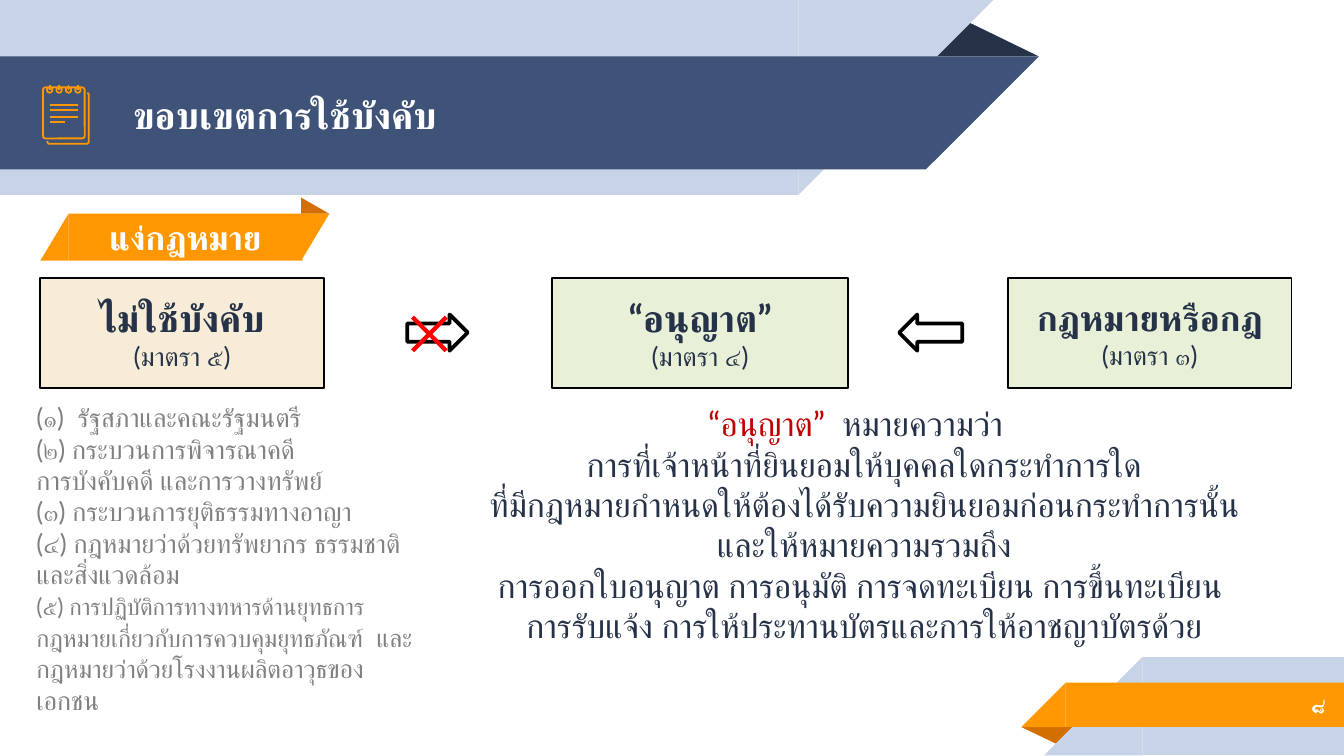
from dataclasses import dataclass
from lxml.etree import SubElement
from pptx import Presentation
from pptx.dml.color import RGBColor
from pptx.enum.shapes import MSO_CONNECTOR, MSO_SHAPE as Preset
from pptx.enum.text import MSO_ANCHOR, MSO_AUTO_SIZE, PP_ALIGN as Align
from pptx.oxml.ns import qn
from pptx.util import Inches, Pt


@dataclass(frozen=True)
class Theme:
    font: str = "Lato"
    navy: str = "3F5378"
    dark: str = "263248"
    pale: str = "C7D3E6"
    orange: str = "FF9800"
    rust: str = "D26F00"
    green: str = "E8F0D8"
    cream: str = "F7ECD7"
    white: str = "FFFFFF"
    black: str = "000000"
    red: str = "FF0000"
    term: str = "C00000"
    grey: str = "808080"
    heading: float = 20
    wide_heading: float = 19
    body: float = 18
    detail: float = 14
    number: float = 12


theme = Theme()


def add_block(preset, box, fill=None, line=None, weight=1, rotation=0, flip=False):
    block = slide.shapes.add_shape(preset, *map(Inches, box))
    block.shadow.inherit = False
    block.rotation = rotation
    if flip:
        block._element.spPr.xfrm.set("flipH", "1")
    if fill:
        block.fill.solid()
        block.fill.fore_color.rgb = RGBColor.from_string(fill)
    else:
        block.fill.background()
    if line:
        block.line.color.rgb = RGBColor.from_string(line)
        block.line.width = Pt(weight)
    else:
        block.line.fill.background()
    return block


def write(frame, lines, align):
    frame.word_wrap = True
    frame.auto_size = MSO_AUTO_SIZE.NONE
    frame.vertical_anchor = MSO_ANCHOR.MIDDLE
    for index, (text, size, color, bold) in enumerate(lines):
        paragraph = frame.add_paragraph() if index else frame.paragraphs[0]
        paragraph.text = text
        paragraph.alignment = align
        paragraph.space_before = Pt(0)
        font = paragraph.font
        font.size, font.bold, font.name = Pt(size), bold, theme.font
        font.color.rgb = RGBColor.from_string(color)
        SubElement(font._element, qn("a:cs"), typeface=theme.font)


prs = Presentation()
prs.slide_width = Inches(10)
prs.slide_height = Inches(10) * 9 // 16
slide = prs.slides.add_slide(prs.slide_layouts[1])
title, exemptions = slide.placeholders

fold = add_block(Preset.ISOSCELES_TRIANGLE, (6.88, 0.14, 0.85, 0.28), theme.dark)
fold.adjustments[0] = 0.324
for top, width, height, color in [(0, 5.94, 1.45, theme.pale), (0.42, 6.89, 0.84, theme.navy)]:
    add_block(Preset.RECTANGLE, (0, top, width, height), color)
    add_block(Preset.RIGHT_TRIANGLE, (width, top, height, height), color, rotation=180, flip=True)

fold = add_block(Preset.ISOSCELES_TRIANGLE, (7.6, 5.41, 0.43, 0.14), theme.rust, rotation=180)
fold.adjustments[0] = 0.324
for left, top, height, color in [(8.5, 4.89, 0.73, theme.pale), (7.93, 5.08, 0.33, theme.orange)]:
    add_block(Preset.RECTANGLE, (left, top, 10 - left, height), color)
    add_block(Preset.RIGHT_TRIANGLE, (left - height, top, height, height), color, flip=True)

slide.shapes._spTree.append(title._element)
title.left, title.top, title.width, title.height = map(Inches, (0.89, 0.43, 6.11, 0.84))
write(title.text_frame, [("ขอบเขตการใช้บังคับ", theme.heading, theme.white, True)], Align.LEFT)

page_number = slide.shapes.add_textbox(*map(Inches, (8.33, 5.07, 1.63, 0.35)))
write(page_number.text_frame, [("๘", theme.number, theme.white, True)], Align.RIGHT)

page_edge = [(0.35, 1.05), (0.36, 1.07), (0.37, 1.07), (0.65, 1.07),
             (0.66, 1.06), (0.66, 1.05), (0.66, 0.7), (0.65, 0.69)]
outline = slide.shapes.build_freeform(*map(Inches, page_edge[0]), scale=1.0)
outline.add_line_segments([(Inches(x), Inches(y)) for x, y in page_edge[1:]], close=False)
back_page = outline.convert_to_shape()
back_page.shadow.inherit = False
back_page.fill.background()
back_page.line.color.rgb = RGBColor.from_string(theme.orange)
back_page.line.width = Pt(0.96)
front_page = add_block(Preset.ROUNDED_RECTANGLE, (0.32, 0.65, 0.31, 0.38), line=theme.orange, weight=0.96)
front_page.adjustments[0] = 0.06

strokes = [(0.37, y, end, y, theme.orange, 0.96)
           for y, end in [(0.78, 0.58), (0.82, 0.58), (0.87, 0.58), (0.91, 0.48)]]
for ring in range(4):
    x = 0.37 + 0.07 * ring
    add_block(Preset.OVAL, (x - 0.02, 0.65, 0.04, 0.04), line=theme.orange, weight=0.96)
    strokes.append((x, 0.63, x, 0.67, theme.orange, 0.96))

law, permit, exempt = "กฎหมายหรือกฎ", "“อนุญาต”", "ไม่ใช้บังคับ"
for left, width, color, heading, size, section in [
    (7.5, 2.11, theme.green, law, theme.wide_heading, "(มาตรา ๓)"),
    (4.11, 2.2, theme.green, permit, theme.heading, "(มาตรา ๔)"),
    (0.3, 2.11, theme.cream, exempt, theme.heading, "(มาตรา ๕)"),
]:
    scope = add_block(Preset.RECTANGLE, (left, 2.07, width, 0.82), color, theme.black)
    write(scope.text_frame, [(heading, size, theme.dark, True),
                             (section, theme.detail, theme.dark, False)], Align.CENTER)

add_block(Preset.RIGHT_ARROW, (6.69, 2.34, 0.47, 0.27), line=theme.black, weight=2, rotation=180)
add_block(Preset.RIGHT_ARROW, (3.03, 2.34, 0.45, 0.27), line=theme.black, weight=2)
strokes += [(3.32, 2.36, 3.07, 2.61, theme.red, 2.25), (3.32, 2.61, 3.07, 2.36, theme.red, 2.25)]

for *ends, color, weight in strokes:
    stroke = slide.shapes.add_connector(MSO_CONNECTOR.STRAIGHT, *map(Inches, ends))
    stroke.line.color.rgb = RGBColor.from_string(color)
    stroke.line.width = Pt(weight)
    SubElement(stroke._element.spPr, qn("a:effectLst"))

definition = slide.shapes.add_textbox(*map(Inches, (2.98, 2.89, 6.9, 2.02))).text_frame
write(definition, [(text, theme.body, theme.dark, False) for text in [
    "",
    "การที่เจ้าหน้าที่ยินยอมให้บุคคลใดกระทำการใด",
    "ที่มีกฎหมายกำหนดให้ต้องได้รับความยินยอมก่อนกระทำการนั้น",
    "และให้หมายความรวมถึง",
    "การออกใบอนุญาต การอนุมัติ การจดทะเบียน การขึ้นทะเบียน ",
    "การรับแจ้ง การให้ประทานบัตรและการให้อาชญาบัตรด้วย",
]], Align.CENTER)
for text, color in [("“อนุญาต”  ", theme.term), ("หมายความว่า  ", theme.dark)]:
    phrase = definition.paragraphs[0].add_run()
    phrase.text = text
    phrase.font.color.rgb = RGBColor.from_string(color)

add_block(Preset.RIGHT_TRIANGLE, (0.3, 1.59, 0.21, 0.35), theme.orange, flip=True)
ribbon = add_block(Preset.RECTANGLE, (0.51, 1.59, 1.74, 0.35), theme.orange)
write(ribbon.text_frame, [("แง่กฎหมาย", theme.body, theme.white, True)], Align.CENTER)
add_block(Preset.RIGHT_TRIANGLE, (2.24, 1.59, 0.21, 0.35), theme.orange, rotation=180, flip=True)
fold = add_block(Preset.ISOSCELES_TRIANGLE, (2.24, 1.47, 0.21, 0.12), theme.rust)
fold.adjustments[0] = 0

slide.shapes._spTree.append(exemptions._element)
exemptions.left, exemptions.top, exemptions.width, exemptions.height = map(Inches, (0.17, 2.89, 3.07, 2.53))
exemption_list = exemptions.text_frame
write(exemption_list, [(text, theme.detail, theme.grey, False) for text in [
    "(๑)  รัฐสภาและคณะรัฐมนตรี",
    "(๒) กระบวนการพิจารณาคดี",
    "การบังคับคดี และการวางทรัพย์",
    "(๓) กระบวนการยุติธรรมทางอาญา",
    "(๔) กฎหมายว่าด้วยทรัพยากร ธรรมชาติและสิ่งแวดล้อม",
    "",
]], Align.LEFT)
for text, size in [
    ("(๕) การปฏิบัติการทางทหารด้านยุทธการ", 12.5),
    (" ", theme.detail),
    ("กฎหมายเกี่ยวกับการควบคุมยุทธภัณฑ์", 13),
    ("  ", theme.detail),
    ("และกฎหมายว่าด้วยโรงงานผลิตอาวุธ", 13.5),
    ("ของเอกชน", theme.detail),
]:
    phrase = exemption_list.paragraphs[-1].add_run()
    phrase.text = text
    phrase.font.size = Pt(size)
for item in exemption_list.paragraphs:
    properties = item._p.get_or_add_pPr()
    properties.set("marL", "0")
    properties.set("indent", "0")
    properties.find(qn("a:defRPr")).addprevious(SubElement(properties, qn("a:buNone")))

prs.save("out.pptx")
